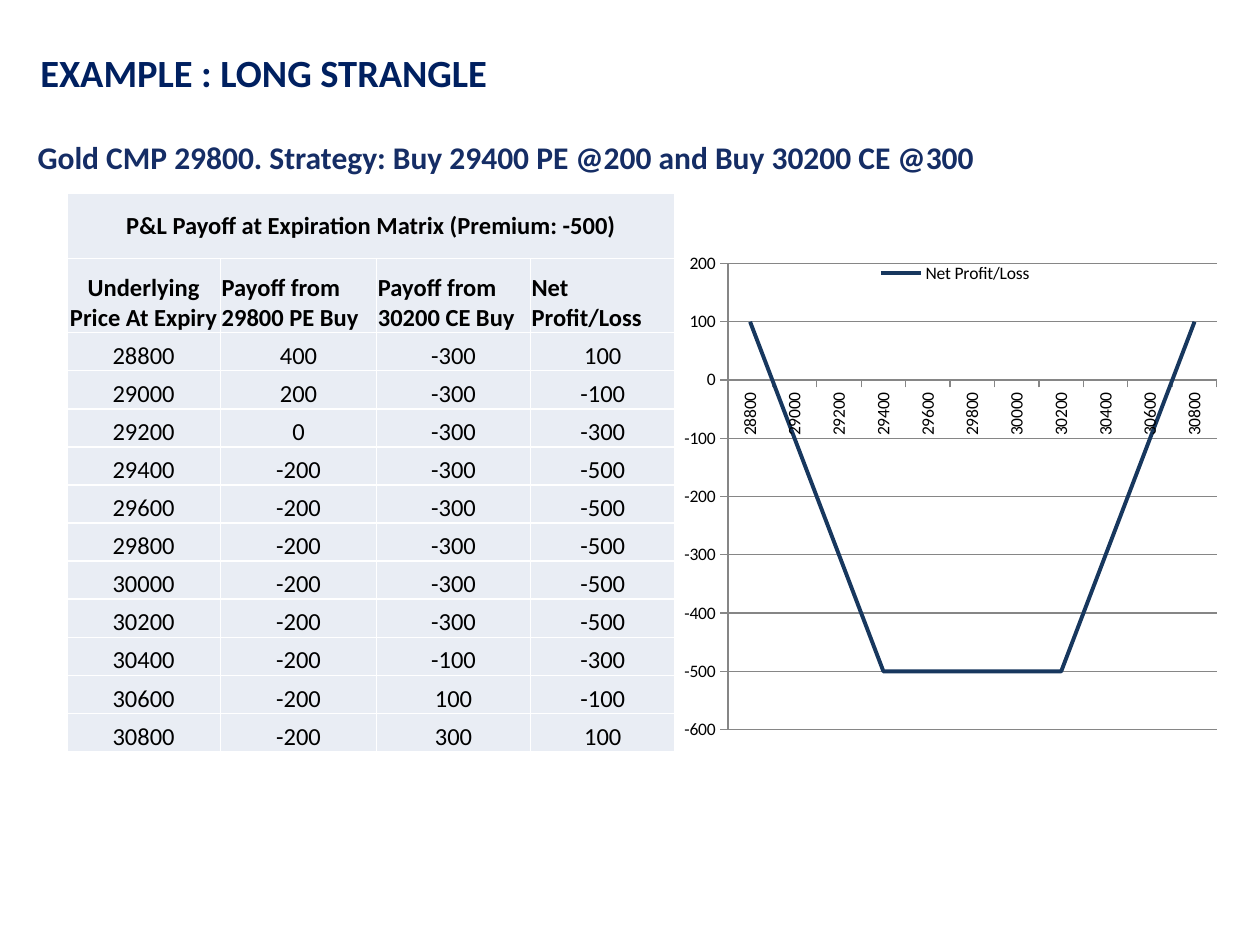
from dataclasses import dataclass

from lxml import etree
from pptx import Presentation
from pptx.chart.data import CategoryChartData
from pptx.dml.color import RGBColor
from pptx.enum.chart import XL_CHART_TYPE, XL_LEGEND_POSITION, XL_MARKER_STYLE, XL_TICK_MARK
from pptx.enum.text import MSO_ANCHOR, PP_ALIGN
from pptx.oxml import parse_xml
from pptx.oxml.ns import nsdecls, qn
from pptx.util import Inches, Pt

LEFT, CENTER = PP_ALIGN.LEFT, PP_ALIGN.CENTER
MIDDLE, BOTTOM = MSO_ANCHOR.MIDDLE, MSO_ANCHOR.BOTTOM
LINE_CHART = XL_CHART_TYPE.LINE
LEGEND_TOP = XL_LEGEND_POSITION.TOP
NO_MARKER = XL_MARKER_STYLE.NONE
TICK_OUTSIDE, TICK_NONE = XL_TICK_MARK.OUTSIDE, XL_TICK_MARK.NONE


@dataclass(frozen=True)
class Theme:
    font: str = "Calibri"
    title: RGBColor = RGBColor(0x00, 0x20, 0x60)
    strategy: RGBColor = RGBColor(0x15, 0x2D, 0x65)
    text: RGBColor = RGBColor(0x00, 0x00, 0x00)
    cell: RGBColor = RGBColor(0xE9, 0xED, 0xF4)
    border: RGBColor = RGBColor(0xFF, 0xFF, 0xFF)
    profit_line: RGBColor = RGBColor(0x17, 0x37, 0x5E)
    axis: RGBColor = RGBColor(0x86, 0x86, 0x86)
    title_size: Pt = Pt(22)
    strategy_size: Pt = Pt(18)
    table_size: Pt = Pt(14)
    chart_size: Pt = Pt(10)


THEME = Theme()
PUT_STRIKE, PUT_PREMIUM = 29400, 200
CALL_STRIKE, CALL_PREMIUM = 30200, 300
NET_LABEL = "Net Profit/Loss"
MATRIX_TITLE = "P&L Payoff at Expiration Matrix (Premium: -500)"
HEADERS = ["Underlying Price At Expiry", "Payoff from 29800 PE Buy",
           "Payoff from 30200 CE Buy", NET_LABEL]


def payoff_rows():
    """Return price, put payoff, call payoff and net result for each expiry price."""
    rows = []
    for price in range(28800, 30801, 200):
        put = max(PUT_STRIKE - price, 0) - PUT_PREMIUM
        call = max(price - CALL_STRIKE, 0) - CALL_PREMIUM
        rows.append((price, put, call, put + call))
    return rows


def place(shape, box):
    shape.left, shape.top, shape.width, shape.height = (Inches(value) for value in box)


def write(text_frame, text, size, color, bold=False, alignment=LEFT):
    paragraph = text_frame.paragraphs[0]
    paragraph.alignment = alignment
    run = paragraph.add_run()
    run.text = text
    run.font.name = THEME.font
    run.font.size = size
    run.font.bold = bold
    run.font.color.rgb = color


def add_title(slide, box):
    title = slide.shapes.title
    place(title, box)
    title.text_frame.vertical_anchor = MIDDLE
    write(title.text_frame, "EXAMPLE : LONG STRANGLE", THEME.title_size, THEME.title, True)


def add_strategy(slide, box):
    strategy = slide.shapes.add_textbox(*(Inches(value) for value in box))
    strategy.text_frame.word_wrap = True
    write(strategy.text_frame,
          "Gold CMP 29800. Strategy: Buy 29400 PE @200 and Buy 30200 CE @300",
          THEME.strategy_size, THEME.strategy, True)


def set_borders(cell):
    properties = cell._tc.get_or_add_tcPr()
    for index, side in enumerate(("lnL", "lnR", "lnT", "lnB")):
        properties.insert(index, parse_xml(
            f'<a:{side} {nsdecls("a")} w="{Pt(1)}"><a:solidFill>'
            f'<a:srgbClr val="{THEME.border}"/></a:solidFill></a:{side}>'))


def fill_cell(cell, text, bold=False, alignment=CENTER, anchor=BOTTOM):
    cell.vertical_anchor = anchor
    write(cell.text_frame, text, THEME.table_size, THEME.text, bold, alignment)


def add_payoff_table(slide, box, rows):
    column_widths = [1.22, 1.24, 1.22, 1.15]
    row_heights = [0.52, 0.59] + [0.3025] * len(rows)
    frame = slide.shapes.add_table(len(row_heights), len(column_widths),
                                   *(Inches(value) for value in box))
    table = frame.table
    table.first_row = table.horz_banding = False
    for column, width in zip(table.columns, column_widths):
        column.width = Inches(width)
    for row, height in zip(table.rows, row_heights):
        row.height = Inches(height)
    for cell in table.iter_cells():
        cell.margin_left = cell.margin_right = cell.margin_top = Inches(0.01)
        cell.margin_bottom = 0
        cell.fill.solid()
        cell.fill.fore_color.rgb = THEME.cell
        set_borders(cell)

    table.cell(0, 0).merge(table.cell(0, len(column_widths) - 1))
    fill_cell(table.cell(0, 0), MATRIX_TITLE, True, anchor=MIDDLE)
    for column, header in enumerate(HEADERS):
        fill_cell(table.cell(1, column), header, True, LEFT if column else CENTER)
    for row, values in enumerate(rows, start=2):
        for column, value in enumerate(values):
            fill_cell(table.cell(row, column), str(value))


def set_plot_area(chart, box):
    """Fix the inner plot area as fractions of the chart."""
    plot_area = chart._chartSpace.chart.plotArea
    for layout in plot_area.findall(qn("c:layout")):
        plot_area.remove(layout)
    layout = etree.Element(qn("c:layout"))
    manual = etree.SubElement(layout, qn("c:manualLayout"))
    settings = [("layoutTarget", "inner"), ("xMode", "edge"), ("yMode", "edge"),
                *zip("xywh", box)]
    for name, value in settings:
        etree.SubElement(manual, qn(f"c:{name}")).set("val", str(value))
    plot_area.insert(0, layout)


def style_line(line, color, width):
    line.color.rgb = color
    line.width = width


def add_payoff_chart(slide, box, rows):
    data = CategoryChartData()
    data.categories = [str(row[0]) for row in rows]
    data.add_series(NET_LABEL, [row[-1] for row in rows])
    chart = slide.shapes.add_chart(LINE_CHART, *(Inches(value) for value in box), data).chart
    chart.has_title = False
    chart.font.name = THEME.font
    chart.font.size = THEME.chart_size
    chart.font.color.rgb = THEME.text
    chart.has_legend = True
    chart.legend.position = LEGEND_TOP
    chart.legend.include_in_layout = False
    chart.legend._element.find(qn("c:overlay")).set("val", "1")
    set_plot_area(chart, (0.092, 0.028, 0.878, 0.93))

    for axis in (chart.category_axis, chart.value_axis):
        axis.major_tick_mark = TICK_OUTSIDE
        axis.minor_tick_mark = TICK_NONE
        style_line(axis.format.line, THEME.axis, Pt(0.75))
    chart.category_axis.tick_labels.font.size = THEME.chart_size
    label_body = chart.category_axis._element.find(qn("c:txPr")).find(qn("a:bodyPr"))
    label_body.set("rot", "-5400000")
    label_body.set("vert", "horz")
    chart.value_axis.minimum_scale = -600
    chart.value_axis.maximum_scale = 200
    chart.value_axis.major_unit = 100
    style_line(chart.value_axis.major_gridlines.format.line, THEME.axis, Pt(0.75))

    chart.plots[0].vary_by_categories = False
    series = chart.plots[0].series[0]
    series.smooth = False
    series.marker.style = NO_MARKER
    style_line(series.format.line, THEME.profit_line, Pt(2.25))


def main():
    presentation = Presentation()
    presentation.slide_width = Inches(10)
    presentation.slide_height = Inches(7.5)
    slide = presentation.slides.add_slide(presentation.slide_layouts.get_by_name("Title Only"))
    rows = payoff_rows()
    add_title(slide, (0.22, 0.3, 7.24, 0.55))
    add_strategy(slide, (0.2, 1.05, 7.74, 0.4))
    add_payoff_table(slide, (0.53, 1.53, 4.82, 4.44), rows)
    add_payoff_chart(slide, (5.37, 1.98, 4.42, 3.98), rows)
    presentation.save("out.pptx")


if __name__ == "__main__":
    main()
